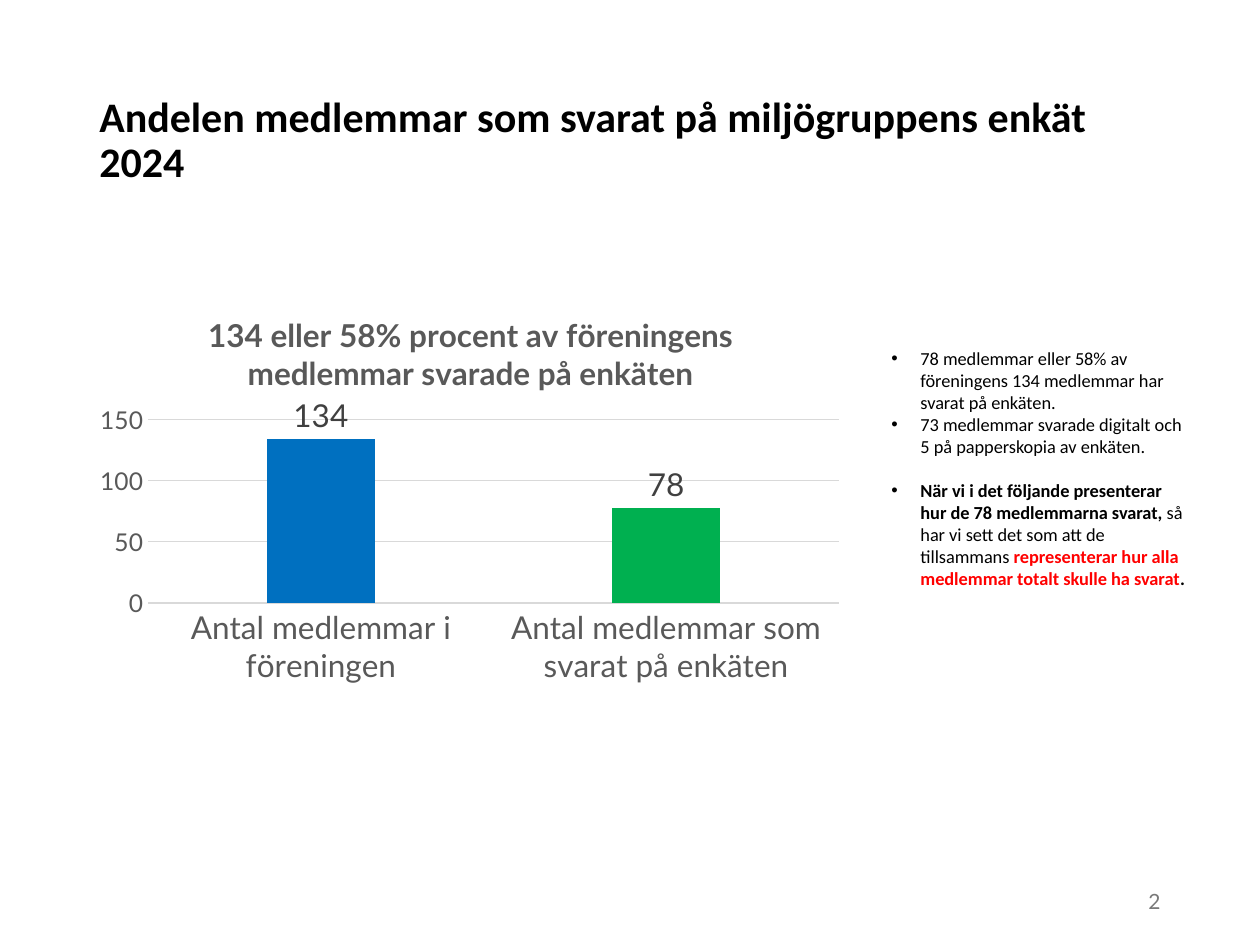
from dataclasses import dataclass

from lxml import etree
from pptx import Presentation, util as u
from pptx.chart.data import CategoryChartData
from pptx.dml.color import RGBColor
from pptx.enum import chart as ch, text as t
from pptx.oxml import parse_xml
from pptx.oxml.ns import nsdecls, qn

SCALE = 914400 / 126  # EMU in one px


@dataclass(frozen=True)
class Theme:
    body: str = "Calibri"
    data: str = "Lato"
    ink: str = "000000"
    alert: str = "FF0000"
    label: str = "404040"
    axis: str = "595959"
    grid: str = "D9D9D9"
    page: str = "797979"
    bars: tuple = ("0070C0", "00B050")
    head: float = 24
    large: float = 18
    tick: float = 14
    small: float = 12
    note: float = 10.5


THEME = Theme()

NOTES = [
    [("78 medlemmar eller 58% av föreningens 134 medlemmar har svarat på enkäten.", False, THEME.ink)],
    [("73 medlemmar svarade digitalt och 5 på papperskopia av enkäten.", False, THEME.ink)],
    [
        ("När vi i det följande presenterar hur de 78 medlemmarna svarat, ", True, THEME.ink),
        ("så har vi sett det som att de tillsammans ", False, THEME.ink),
        ("representerar hur alla medlemmar totalt skulle ha svarat", True, THEME.alert),
        (".", True, THEME.ink),
    ],
]


def px(n):
    return u.Emu(round(n * SCALE))


def style(font, name, size, color, bold=False):
    font.name, font.size, font.bold = name, u.Pt(size), bold
    font.color.rgb = RGBColor.from_string(color)


def add_box(slide, at, anchor=t.MSO_ANCHOR.TOP):
    frame = slide.shapes.add_textbox(*map(px, at)).text_frame
    frame.word_wrap = True
    frame.vertical_anchor = anchor
    return frame


def add_line(slide, at, words, name, size, color, bold=False, align=None, space=None):
    par = add_box(slide, at, t.MSO_ANCHOR.MIDDLE).paragraphs[0]
    par.text = words
    par.alignment, par.line_spacing = align, space
    style(par.font, name, size, color, bold)


def add_bullet(par):
    props = par._p.get_or_add_pPr()
    props.set("marL", str(px(29)))
    props.set("indent", str(-px(29)))
    etree.SubElement(props, qn("a:buFont")).set("typeface", "Arial")
    etree.SubElement(props, qn("a:buChar")).set("char", "•")


def add_notes(slide, at, notes):
    frame = add_box(slide, at)
    for i, runs in enumerate(notes):
        par = frame.paragraphs[0] if i == 0 else frame.add_paragraph()
        add_bullet(par)
        for words, bold, color in runs:
            run = par.add_run()
            run.text = words
            style(run.font, THEME.body, THEME.note, color, bold)
    par.space_before = u.Pt(1.2 * THEME.note)  # one line above the last note


def set_plot(chart, **parts):
    """Fix the inner plot area as fractions of the chart."""
    inner = "".join(f'<c:{key} val="{val}"/>' for key, val in parts.items())
    area = chart._chartSpace.chart.plotArea
    for old in area.findall(qn("c:layout")):
        area.remove(old)
    area.insert(0, parse_xml(
        f'<c:layout {nsdecls("c")}><c:manualLayout><c:layoutTarget val="inner"/>'
        f'<c:xMode val="edge"/><c:yMode val="edge"/>{inner}</c:manualLayout></c:layout>'))


def add_bars(slide, at, title, cats, vals):
    data = CategoryChartData()
    data.categories = cats
    data.add_series("Series 1", vals)
    kind = ch.XL_CHART_TYPE.COLUMN_CLUSTERED
    chart = slide.shapes.add_chart(kind, *map(px, at), data).chart
    style(chart.font, THEME.data, THEME.large, THEME.axis)
    chart.has_legend = False
    chart.has_title = True
    par = chart.chart_title.text_frame.paragraphs[0]
    par.text = title
    style(par.font, THEME.data, THEME.large, THEME.axis, True)
    chart.chart_title.include_in_layout = False
    set_plot(chart, x=0.08, y=0.32, w=0.9, h=0.46)

    grid = RGBColor.from_string(THEME.grid)
    base, side = chart.category_axis, chart.value_axis
    for axis, size in ((base, THEME.large), (side, THEME.tick)):
        axis.major_tick_mark = ch.XL_TICK_MARK.NONE
        style(axis.tick_labels.font, THEME.data, size, THEME.axis)
    side.format.line.fill.background()
    side.minimum_scale, side.maximum_scale, side.major_unit = 0, 150, 50
    for line in (base.format.line, side.major_gridlines.format.line):
        line.color.rgb, line.width = grid, u.Pt(0.75)

    plot = chart.plots[0]
    plot.gap_width, plot.overlap, plot.vary_by_categories = 219, -27, False
    series = plot.series[0]
    series.format.fill.solid()
    series.format.fill.fore_color.rgb = RGBColor.from_string(THEME.bars[0])
    second = series.points[1].format.fill
    second.solid()
    second.fore_color.rgb = RGBColor.from_string(THEME.bars[1])
    labels = series.data_labels
    labels.show_value = True
    labels.position = ch.XL_LABEL_POSITION.OUTSIDE_END
    style(labels.font, THEME.data, THEME.large, THEME.label)


def main():
    deck = Presentation()
    deck.slide_width, deck.slide_height = px(1260), px(945)
    slide = deck.slides.add_slide(deck.slide_layouts[6])
    add_line(slide, (87, 50, 1086, 183),
             "Andelen medlemmar som svarat på miljögruppens enkät 2024",
             THEME.body, THEME.head, THEME.ink, bold=True, space=0.9)
    add_bars(slide, (87, 292, 767, 399),
             "134 eller 58% procent av föreningens medlemmar svarade på enkäten",
             ["Antal medlemmar i föreningen", "Antal medlemmar som svarat på enkäten"],
             [134, 78])
    add_notes(slide, (879, 341, 324, 257), NOTES)
    add_line(slide, (890, 876, 283, 50), "2", THEME.data, THEME.small,
             THEME.page, align=t.PP_ALIGN.RIGHT)
    deck.save("out.pptx")


if __name__ == "__main__":
    main()
